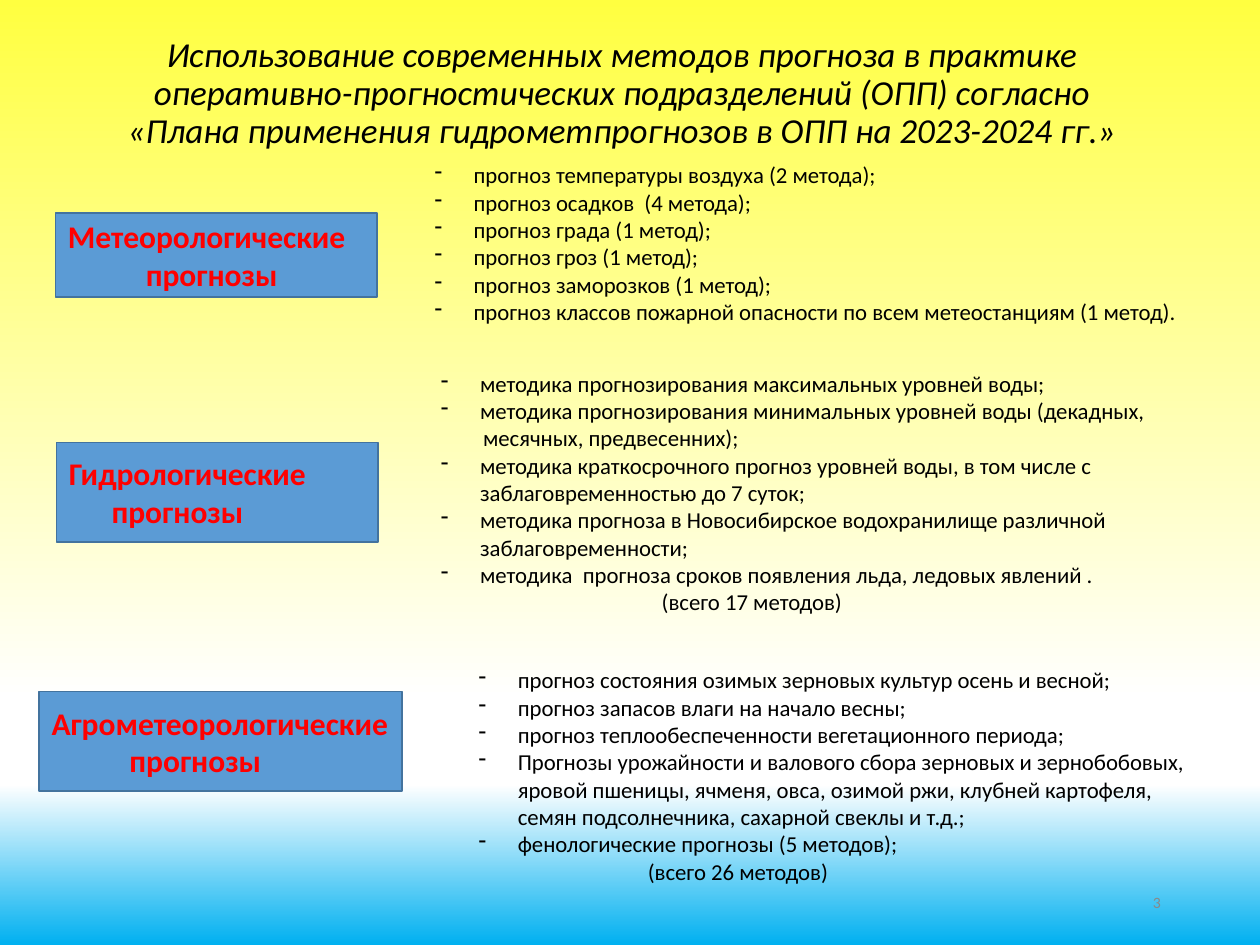
from lxml.etree import SubElement
from pptx import Presentation
from pptx.dml.color import RGBColor
from pptx.enum.shapes import MSO_SHAPE as Shape
from pptx.enum.text import MSO_ANCHOR as Anchor, PP_ALIGN as Align
from pptx.oxml.ns import qn
from pptx.util import Cm, Pt

THEME = {
    "background": [(0, "FFFF40"), (74, "FFFFFF"), (83, "FFFFFF"), (100, "00B0F0")],
    "box": "5B9BD5",
    "border": "43739E",
    "title": {"size": Pt(20), "color": "000000", "italic": True},
    "label": {"size": Pt(18), "color": "FF0000", "bold": True},
    "body": {"size": Pt(13), "color": "000000"},
    "number": {"size": Pt(9), "color": "898989"},
    "font": "Calibri",
}
HANGING = 0.79
TITLE = (
    "Использование современных методов прогноза в практике "
    "оперативно-прогностических подразделений (ОПП) согласно "
    "«Плана применения гидрометпрогнозов в ОПП на 2023-2024 гг.»"
)
TITLE_AREA = (1.65, 0.3, 21.79, 2.87)
NUMBER_AREA = (17.95, 17.69, 5.7, 1)
SECTIONS = [
    {
        "label": [("Метеорологические", 0), ("прогнозы", 1.57)],
        "label_area": (1.12, 4.29, 6.48, 1.7),
        "methods_area": (8.51, 3.12, 15.8, 5.54),
        "methods": [
            "прогноз температуры воздуха (2 метода);",
            "прогноз осадков  (4 метода);",
            "прогноз града (1 метод);",
            "прогноз гроз (1 метод);",
            "прогноз заморозков (1 метод);",
            "прогноз классов пожарной опасности по всем метеостанциям (1 метод).",
        ],
    },
    {
        "label": [("Гидрологические", 0), ("прогнозы", 0.86)],
        "label_area": (1.14, 8.92, 6.48, 2.01),
        "methods_area": (8.64, 7.32, 15.9, 5.26),
        "methods": [
            "методика прогнозирования максимальных уровней воды;",
            "методика прогнозирования минимальных уровней воды (декадных,",
            ("месячных, предвесенних);", 0.85),
            "методика краткосрочного прогноз уровней воды, в том числе с "
            "заблаговременностью до 7 суток;",
            "методика прогноза в Новосибирское водохранилище различной "
            "заблаговременности;",
            "методика  прогноза сроков появления льда, ледовых явлений .",
            ("(всего 17 методов)", 4.45),
        ],
    },
    {
        "label": [("Агрометеорологические", 0), ("прогнозы", 1.57)],
        "label_area": (0.79, 13.94, 7.32, 2.01),
        "methods_area": (9.4, 13.3, 15.14, 4.71),
        "methods": [
            "прогноз состояния озимых зерновых культур осень и весной;",
            "прогноз запасов влаги на начало весны;",
            "прогноз теплообеспеченности вегетационного периода;",
            "Прогнозы урожайности и валового сбора зерновых и зернобобовых, "
            "яровой пшеницы, ячменя, овса, озимой ржи, клубней картофеля, "
            "семян подсолнечника, сахарной свеклы и т.д.;",
            "фенологические прогнозы (5 методов);",
            ("(всего 26 методов)", 3.41),
        ],
    },
]


def paint_background(slide):
    """Fill the slide with the vertical theme gradient."""
    fill = slide.background.fill
    fill.gradient()
    fill.gradient_angle = 270
    stops = slide.element.find(".//" + qn("a:gsLst"))
    stops.clear()
    for position, color in THEME["background"]:
        stop = SubElement(stops, qn("a:gs"), pos=str(position * 1000))
        SubElement(stop, qn("a:srgbClr"), val=color)


def write(shape, lines, style, anchor=Anchor.TOP, align=Align.LEFT, spacing=1.0):
    """Write plain strings as dashed items and (text, indent) pairs as indented lines."""
    frame = shape.text_frame
    frame.word_wrap = True
    frame.vertical_anchor = anchor
    for index, line in enumerate(lines):
        paragraph = frame.paragraphs[0] if index == 0 else frame.add_paragraph()
        dashed = isinstance(line, str)
        text, indent = (line, HANGING) if dashed else line
        paragraph.alignment = align
        paragraph.line_spacing = spacing
        properties = paragraph._p.get_or_add_pPr()
        properties.set("marL", str(Cm(indent)))
        properties.set("indent", str(-Cm(indent) if dashed else 0))
        if dashed:
            SubElement(properties, qn("a:buFontTx"))
            SubElement(properties, qn("a:buChar"), char="-")
        else:
            SubElement(properties, qn("a:buNone"))
        font = paragraph.add_run().font
        paragraph.runs[0].text = text
        font.name = THEME["font"]
        for name, value in THEME[style].items():
            if name == "color":
                font.color.rgb = RGBColor.from_string(value)
            else:
                setattr(font, name, value)


def add_text(slide, area, lines, style, **layout):
    """Add a wrapped text box."""
    write(slide.shapes.add_textbox(*map(Cm, area)), lines, style, **layout)


def add_label(slide, area, lines):
    """Add a filled section label."""
    shape = slide.shapes.add_shape(Shape.RECTANGLE, *map(Cm, area))
    shape.shadow.inherit = False
    shape.fill.solid()
    shape.fill.fore_color.rgb = RGBColor.from_string(THEME["box"])
    shape.line.color.rgb = RGBColor.from_string(THEME["border"])
    shape.line.width = Pt(1)
    shape.text_frame.margin_right = 0
    write(shape, lines, "label", anchor=Anchor.MIDDLE)


def main():
    """Build and save the forecast methods slide."""
    presentation = Presentation()
    presentation.slide_width, presentation.slide_height = Cm(25.4), Cm(19.05)
    slide = presentation.slides.add_slide(presentation.slide_layouts[6])
    paint_background(slide)
    add_text(slide, TITLE_AREA, [(TITLE, 0)], "title",
             anchor=Anchor.BOTTOM, align=Align.CENTER, spacing=0.9)
    for section in SECTIONS:
        add_label(slide, section["label_area"], section["label"])
        add_text(slide, section["methods_area"], section["methods"], "body")
    add_text(slide, NUMBER_AREA, [("3", 0)], "number",
             anchor=Anchor.MIDDLE, align=Align.RIGHT)
    presentation.save("out.pptx")


if __name__ == "__main__":
    main()
